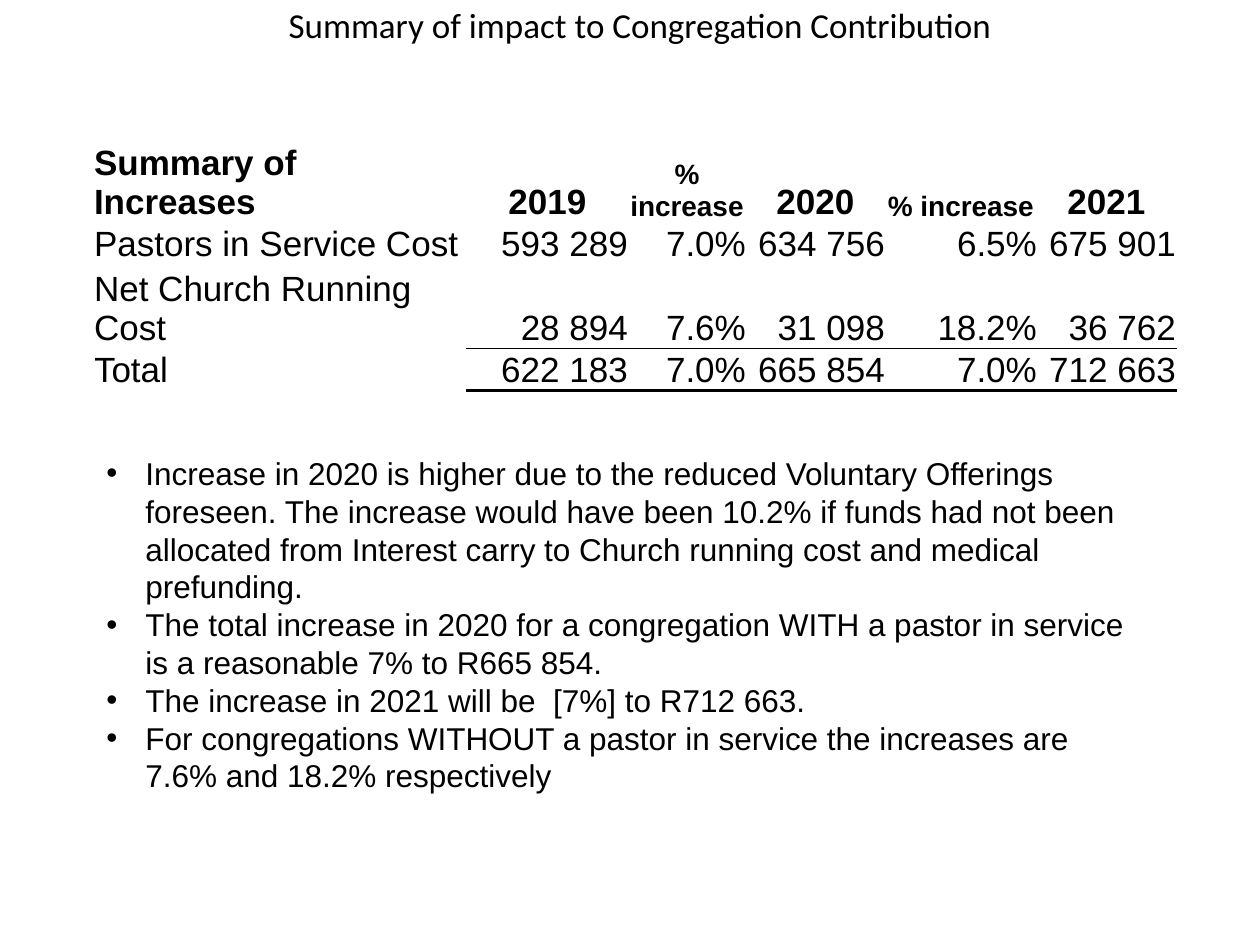
"""Builds the slide on the impact of cost increases on the congregation contribution."""
from lxml import etree
from pptx import Presentation
from pptx import util as u
from pptx.dml.color import RGBColor
from pptx.enum import text
from pptx.oxml import ns

COLOURS = {"ink": "000000"}
TITLE = "Summary of impact to Congregation Contribution"
ROWS = [
    ("Summary of Increases", "2019", "% increase", "2020", "% increase", "2021"),
    ("Pastors in Service Cost", "593 289", "7.0%", "634 756", "6.5%", "675 901"),
    ("Net Church Running Cost", "28 894", "7.6%", "31 098", "18.2%", "36 762"),
    ("Total", "622 183", "7.0%", "665 854", "7.0%", "712 663"),
]
BULLETS = [
    "Increase in 2020 is higher due to the reduced Voluntary Offerings foreseen. "
    "The increase would have been 10.2% if funds had not been allocated from "
    "Interest carry to Church running cost and medical prefunding.",
    "The total increase in 2020 for a congregation WITH a pastor in service "
    "is a reasonable 7% to R665 854.",
    "The increase in 2021 will be  [7%] to R712 663.",
    "For congregations WITHOUT a pastor in service the increases are "
    "7.6% and 18.2% respectively",
]
COLUMN_WIDTHS = [373, 161, 118, 139, 152, 139]
ROW_HEIGHTS = [85, 42, 83, 42]
RULES = {2: [("lnB", 0.5)], 3: [("lnT", 0.5), ("lnB", 2)]}
LEFT, CENTRE, RIGHT = text.PP_ALIGN.LEFT, text.PP_ALIGN.CENTER, text.PP_ALIGN.RIGHT


def px(*lengths):
    return [round(length * 914400 / 126) for length in lengths]


def write(para, words, size=20, font="Arial", bold=False, align=LEFT):
    para.alignment = align
    span = para.add_run()
    span.text = words
    span.font.size, span.font.name, span.font.bold = u.Pt(size), font, bold
    span.font.color.rgb = RGBColor.from_string(COLOURS["ink"])


def add_bullet(para, indent):
    props = para._p.get_or_add_pPr()
    props.set("marL", str(indent))
    props.set("indent", str(-indent))
    etree.SubElement(props, ns.qn("a:buFont"), typeface="Arial")
    etree.SubElement(props, ns.qn("a:buChar"), char="•")


def add_border(cell, side, points):
    line = etree.SubElement(cell._tc.get_or_add_tcPr(), ns.qn("a:" + side), w=str(u.Pt(points)))
    fill = etree.SubElement(line, ns.qn("a:solidFill"))
    etree.SubElement(fill, ns.qn("a:srgbClr"), val=COLOURS["ink"])


def add_summary(page):
    frame = page.shapes.add_table(len(ROWS), len(COLUMN_WIDTHS),
                                  *px(94, 137, sum(COLUMN_WIDTHS), sum(ROW_HEIGHTS)))
    table = frame.table
    table.first_row = table.horz_banding = False
    for column, width in zip(table.columns, px(*COLUMN_WIDTHS)):
        column.width = width
    for row, height in zip(table.rows, px(*ROW_HEIGHTS)):
        row.height = height
    for r, row in enumerate(ROWS):
        for c, words in enumerate(row):
            cell = table.cell(r, c)
            cell.margin_left = cell.margin_right = cell.margin_top = cell.margin_bottom = 0
            cell.vertical_anchor = text.MSO_ANCHOR.BOTTOM
            for side, points in RULES.get(r, []) if c else []:
                add_border(cell, side, points)
            cell.fill.background()
            align = LEFT if c == 0 else CENTRE if r == 0 else RIGHT
            write(cell.text_frame.paragraphs[0], words, bold=r == 0, align=align,
                  size=16 if words == "% increase" else 20)


def add_notes(page):
    frame = page.shapes.add_textbox(*px(94, 410, 1052, 394)).text_frame
    frame.word_wrap = True
    frame.margin_top = px(44)[0]
    for i, words in enumerate(BULLETS):
        para = frame.add_paragraph() if i else frame.paragraphs[0]
        add_bullet(para, px(39)[0])
        write(para, words, size=18)


def main():
    deck = Presentation()
    deck.slide_width, deck.slide_height = px(1260, 945)
    page = deck.slides.add_slide(deck.slide_layouts[5])
    title = page.shapes.title
    title.left, title.top, title.width, title.height = px(73, 1, 1134, 48)
    title.text_frame.vertical_anchor = text.MSO_ANCHOR.MIDDLE
    write(title.text_frame.paragraphs[0], TITLE, font="Calibri", align=CENTRE)
    add_notes(page)
    add_summary(page)
    deck.save("out.pptx")


if __name__ == "__main__":
    main()
